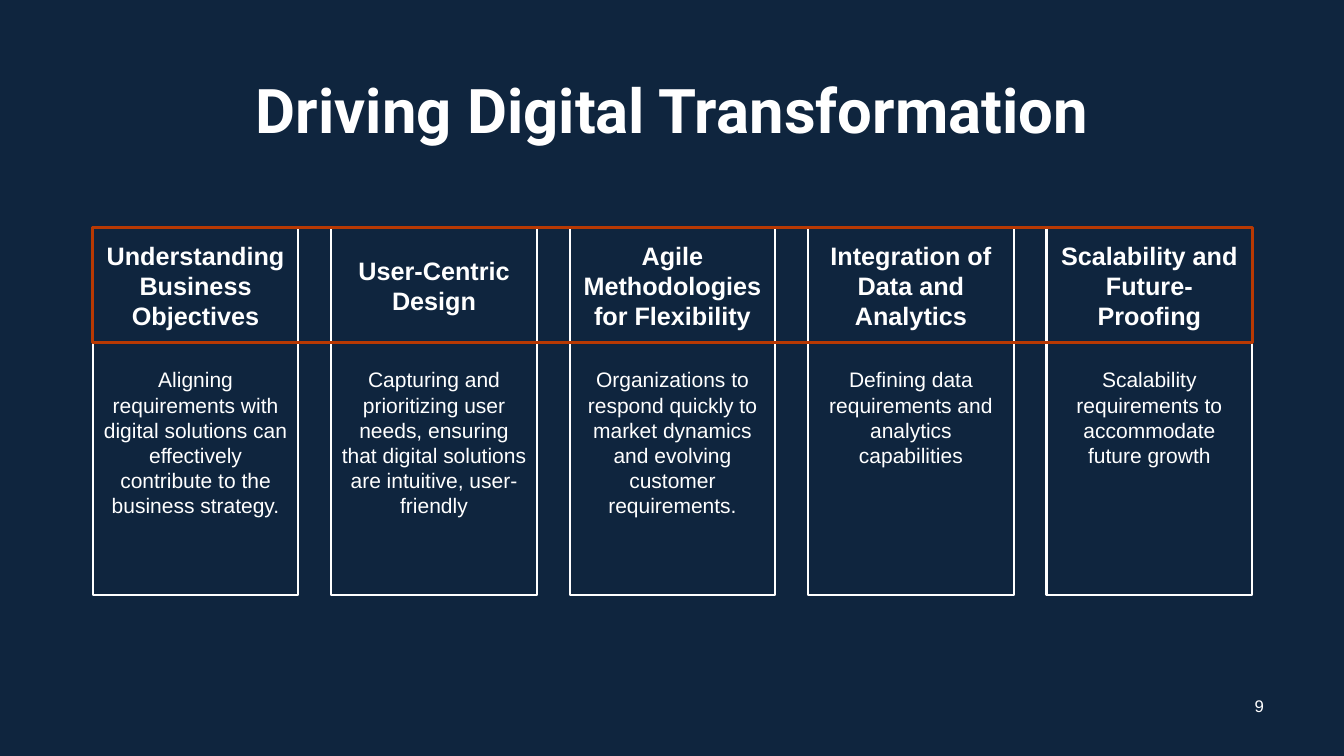
from pptx import Presentation
from pptx.dml.color import RGBColor
from pptx.enum.shapes import MSO_SHAPE
from pptx.enum.text import MSO_ANCHOR, MSO_AUTO_SIZE, PP_ALIGN
from pptx.util import Emu, Pt

EMU_PER_PX = 9144
NAVY, WHITE, RUST = "0F253E", "FFFFFF", "B83903"

PILLARS = [
    ("Understanding Business Objectives",
     "Aligning requirements with digital solutions can effectively contribute to the business strategy."),
    ("User-Centric Design",
     "Capturing and prioritizing user needs, ensuring that digital solutions are intuitive, user-friendly"),
    ("Agile Methodologies for Flexibility",
     "Organizations to respond quickly to market dynamics and evolving customer requirements."),
    ("Integration of Data and Analytics",
     "Defining data requirements and analytics capabilities"),
    ("Scalability and Future-Proofing",
     "Scalability requirements to accommodate future growth"),
]


def px(length):
    return Emu(round(length * EMU_PER_PX))


def color(hex_string):
    return RGBColor.from_string(hex_string)


def write_text(shape, text, size, font="Arial", bold=False,
               anchor=MSO_ANCHOR.MIDDLE, top_inset=5, line_spacing=None):
    frame = shape.text_frame
    frame.word_wrap = True
    frame.auto_size = MSO_AUTO_SIZE.NONE
    frame.vertical_anchor = anchor
    frame.margin_left = frame.margin_right = px(10)
    frame.margin_top, frame.margin_bottom = px(top_inset), px(5)
    paragraph = frame.paragraphs[0]
    paragraph.alignment = PP_ALIGN.CENTER
    paragraph.line_spacing = line_spacing
    run = paragraph.add_run()
    run.text = text
    run.font.name = font
    run.font.size = Pt(size)
    run.font.bold = bold
    run.font.color.rgb = color(WHITE)


def add_outline(slide, left, top, width, height, line_color, line_width):
    shape = slide.shapes.add_shape(
        MSO_SHAPE.RECTANGLE, px(left), px(top), px(width), px(height))
    shape.shadow.inherit = False
    shape.fill.background()
    shape.line.color.rgb = color(line_color)
    shape.line.width = Pt(line_width)
    return shape


def place_title(slide, left, top, width, height, text):
    title = slide.shapes.title
    title.left, title.top = px(left), px(top)
    title.width, title.height = px(width), px(height)
    write_text(title, text, size=44, font="Roboto", bold=True, line_spacing=0.9)


def add_pillars(slide, left, top, width, height, pillars):
    column_width, heading_height = 204, 114
    step = (width - column_width) / (len(pillars) - 1)
    for index, (heading, detail) in enumerate(pillars):
        column_left = left + index * step
        heading_box = add_outline(slide, column_left, top, column_width,
                                  heading_height, WHITE, 1.5)
        write_text(heading_box, heading, size=18, bold=True)
        detail_box = add_outline(slide, column_left, top + heading_height, column_width,
                                 height - heading_height, WHITE, 1.5)
        write_text(detail_box, detail, size=15, anchor=MSO_ANCHOR.TOP, top_inset=24)
    add_outline(slide, left, top, width, heading_height, RUST, 2.25)


def add_page_number(slide, left, top, width, height, number):
    box = slide.shapes.add_textbox(px(left), px(top), px(width), px(height))
    write_text(box, number, size=12)


def build_pillar_slide(presentation):
    slide = presentation.slides.add_slide(presentation.slide_layouts[5])
    slide.background.fill.solid()
    slide.background.fill.fore_color.rgb = color(NAVY)
    place_title(slide, 92, 40, 1150, 145, "Driving Digital Transformation")
    add_pillars(slide, 92, 226, 1150, 364, PILLARS)
    add_page_number(slide, 1224, 680, 50, 40, "9")


def main():
    presentation = Presentation()
    presentation.slide_width = px(1333)
    presentation.slide_height = px(750)
    build_pillar_slide(presentation)
    presentation.save("out.pptx")


if __name__ == "__main__":
    main()
